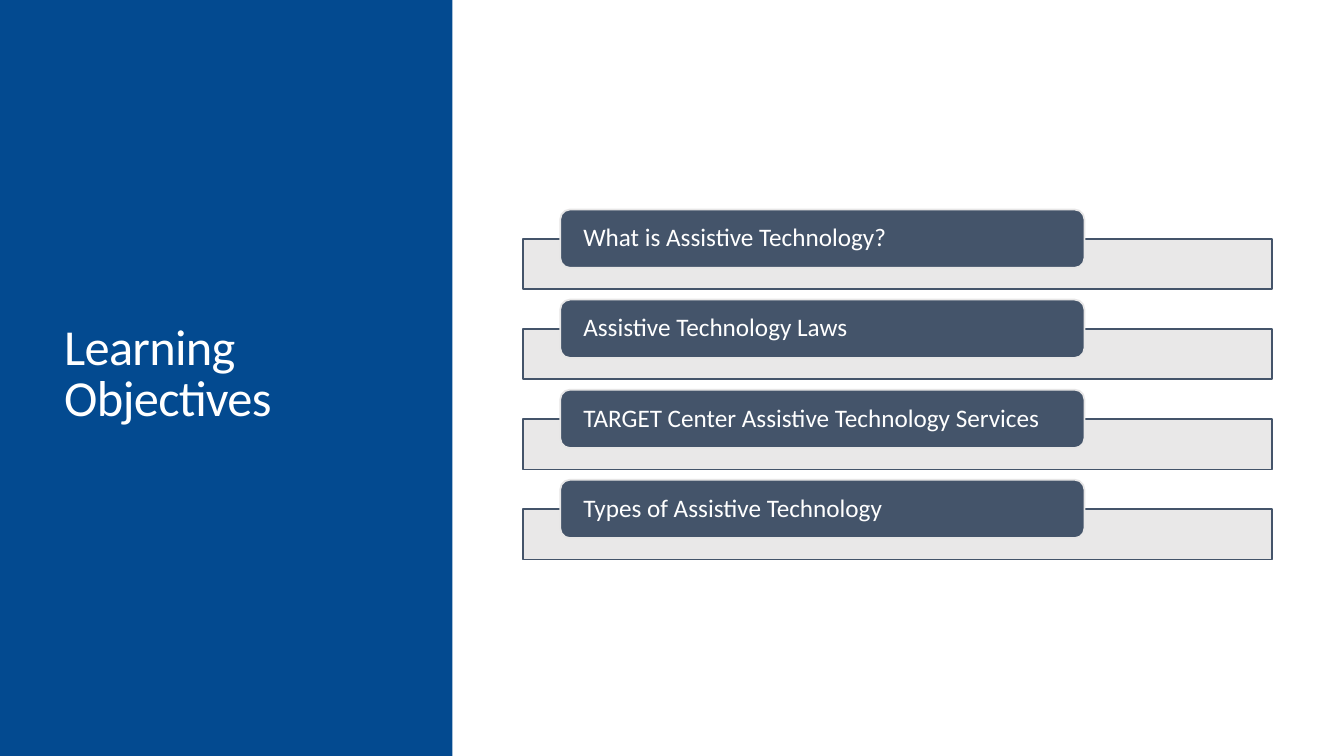
from lxml.etree import SubElement
from pptx import Presentation
from pptx.dml.color import RGBColor
from pptx.enum.shapes import MSO_SHAPE as Shape
from pptx.enum.text import MSO_ANCHOR as Anchor, PP_ALIGN as Align
from pptx.oxml.ns import qn
from pptx.util import Cm, Pt

TITLE = "Learning Objectives"
OBJECTIVES = [
    "What is Assistive Technology?",
    "Assistive Technology Laws",
    "TARGET Center Assistive Technology Services",
    "Types of Assistive Technology",
]

BLUE = RGBColor(0x03, 0x4A, 0x90)
SLATE = RGBColor(0x44, 0x54, 0x6A)
GRAY = RGBColor(0xE7, 0xE6, 0xE6)
WHITE = RGBColor(0xFF, 0xFF, 0xFF)

SLIDE_WIDTH, SLIDE_HEIGHT = 33.87, 19.05
PANEL_WIDTH = 11.4
ROW_PITCH = 2.27
BAR_LEFT, BAR_TOP, BAR_WIDTH, BAR_HEIGHT = 13.18, 6.02, 18.87, 1.27
LABEL_LEFT, LABEL_TOP, LABEL_WIDTH, LABEL_HEIGHT = 14.12, 5.28, 13.21, 1.47


def add_block(page, kind, left, top, width, height, fill, line=None, opacity=100):
    block = page.shapes.add_shape(kind, Cm(left), Cm(top), Cm(width), Cm(height))
    block.shadow.inherit = False
    block.fill.solid()
    block.fill.fore_color.rgb = fill
    if opacity < 100:
        color = block.fill._xPr.find(qn("a:solidFill"))[0]
        SubElement(color, qn("a:alpha")).set("val", str(opacity * 1000))
    if line is None:
        block.line.fill.background()
    else:
        block.line.color.rgb = line
        block.line.width = Pt(1.25)
    return block


def write_text(box, text, size, line_spacing, side=0.25, end=0.13, tracking=0):
    frame = box.text_frame
    frame.word_wrap = True
    frame.vertical_anchor = Anchor.MIDDLE
    frame.margin_left = frame.margin_right = Cm(side)
    frame.margin_top = frame.margin_bottom = Cm(end)
    para = frame.paragraphs[0]
    para.alignment = Align.LEFT
    para.line_spacing = line_spacing
    span = para.add_run()
    span.text = text
    span.font.name = "Calibri"
    span.font.size = Pt(size)
    span.font.color.rgb = WHITE
    if tracking:
        span.font._element.set("spc", str(tracking))


deck = Presentation()
deck.slide_width, deck.slide_height = Cm(SLIDE_WIDTH), Cm(SLIDE_HEIGHT)
page = deck.slides.add_slide(deck.slide_layouts[6])

add_block(page, Shape.RECTANGLE, 0, 0, PANEL_WIDTH, SLIDE_HEIGHT, BLUE)
title_box = page.shapes.add_textbox(Cm(1.37), Cm(1.45), Cm(8.56), Cm(16.03))
write_text(title_box, TITLE, 36, 0.85, tracking=-50)

for row, objective in enumerate(OBJECTIVES):
    offset = row * ROW_PITCH
    add_block(page, Shape.RECTANGLE, BAR_LEFT, BAR_TOP + offset,
              BAR_WIDTH, BAR_HEIGHT, GRAY, line=SLATE, opacity=90)
    label = add_block(page, Shape.ROUNDED_RECTANGLE, LABEL_LEFT, LABEL_TOP + offset,
                      LABEL_WIDTH, LABEL_HEIGHT, SLATE, line=GRAY)
    write_text(label, objective, 18, 0.9, side=0.51, end=0)

deck.save("out.pptx")
